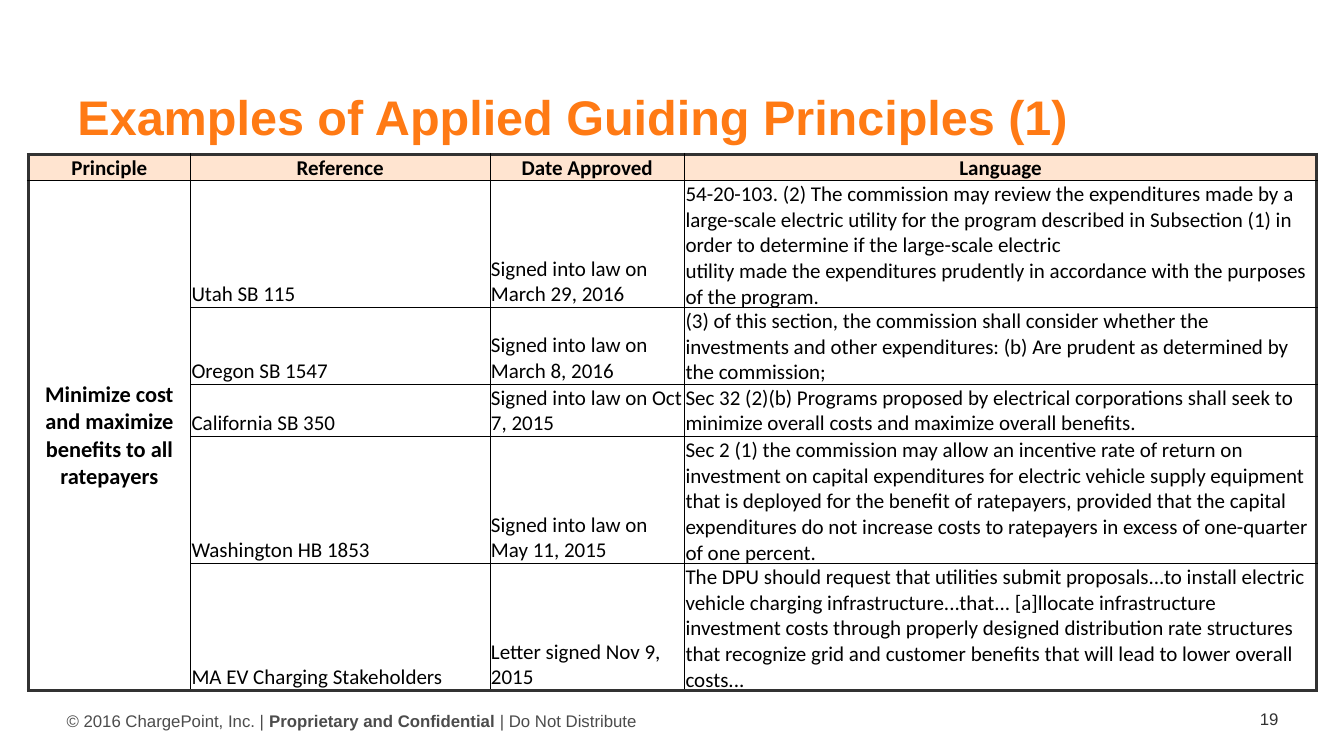
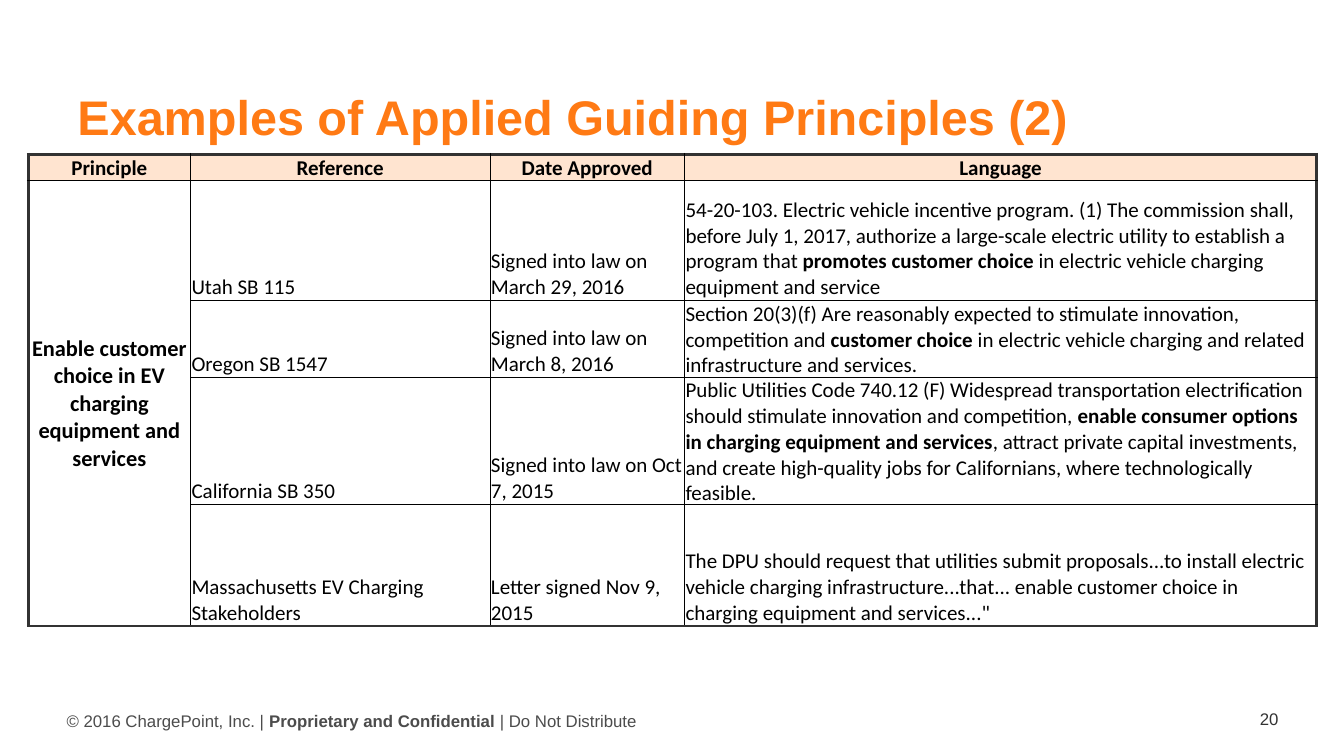
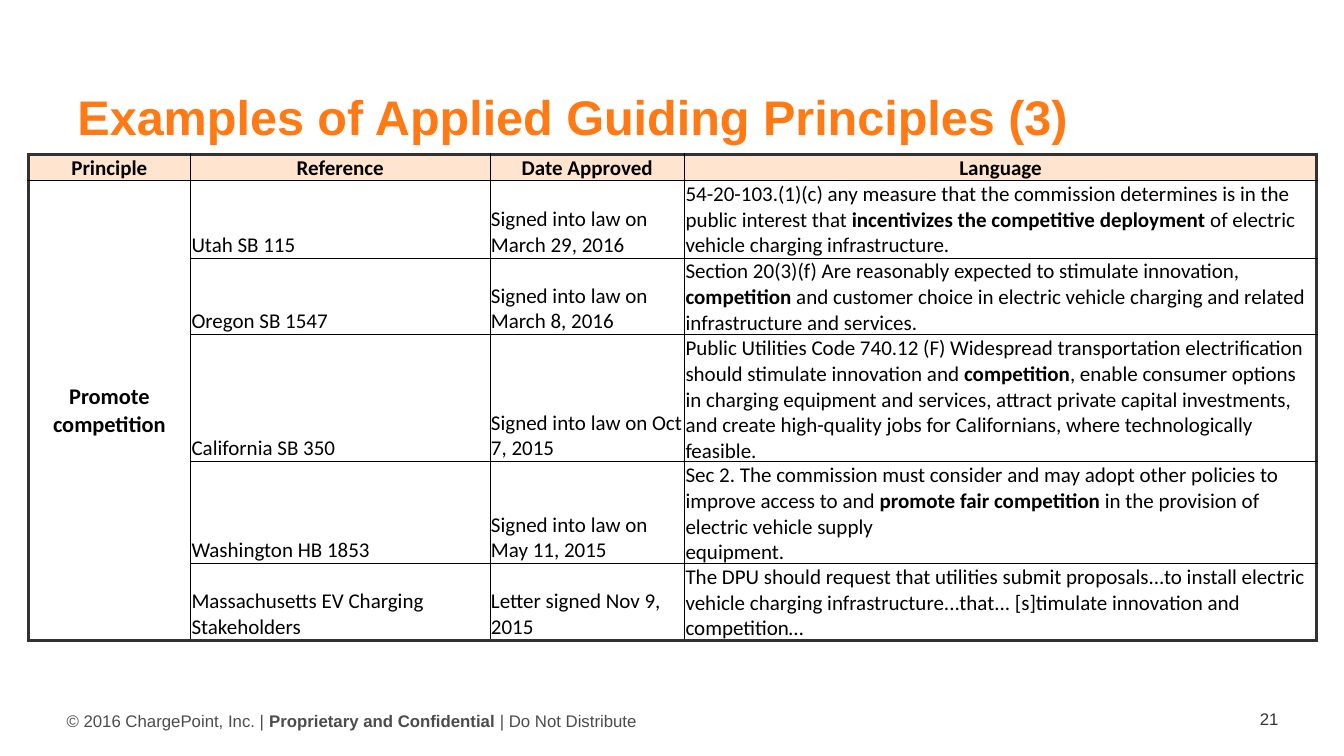
from dataclasses import dataclass

from lxml import etree
from pptx import Presentation
from pptx.dml.color import RGBColor
from pptx.enum.text import MSO_ANCHOR, PP_ALIGN
from pptx.oxml.ns import qn
from pptx.util import Inches, Pt

CENTER, LEFT, RIGHT = PP_ALIGN.CENTER, PP_ALIGN.LEFT, PP_ALIGN.RIGHT
TOP, MIDDLE, BOTTOM = MSO_ANCHOR.TOP, MSO_ANCHOR.MIDDLE, MSO_ANCHOR.BOTTOM


@dataclass
class Theme:
    title: str = "FF7A14"
    footer: str = "4C4C4C"
    dark: str = "323232"
    ink: str = "000000"
    header_fill: str = "FFE4D0"
    slide_font: str = "Arial"
    table_font: str = "Calibri"
    title_size: float = 34.7
    footer_size: float = 12
    cell_size: float = 15
    principle_size: float = 16
    frame_width: float = 2.25
    grid_width: float = 0.5


THEME = Theme()

HEADINGS = ["Principle", "Reference", "Date Approved", "Language"]
COLUMN_WIDTHS = [1.61, 2.97, 1.93, 6.27]
HEADER_HEIGHT = 0.26
FOOTER = "© 2016 ChargePoint, Inc. | **Proprietary and Confidential **| Do Not Distribute"
FIRST_PAGE = 19

UTAH = ("Utah SB 115", "Signed into law on March 29, 2016")
OREGON = ("Oregon SB 1547", "Signed into law on March 8, 2016")
CALIFORNIA = ("California SB 350", "Signed into law on Oct 7, 2015")
WASHINGTON = ("Washington HB 1853", "Signed into law on May 11, 2015")
LETTER_DATE = "Letter signed Nov 9, 2015"
MASSACHUSETTS = ("Massachusetts EV Charging Stakeholders", LETTER_DATE)
DPU = ("The DPU should request that utilities submit proposals...to install electric "
       "vehicle charging infrastructure...that... ")

# Each principle has rows of (height, (reference, date), language); ** marks bold text.
PRINCIPLES = [
    ("Minimize cost and maximize benefits to all ratepayers", [
        (1.26, UTAH,
         "54-20-103. (2) The commission may review the expenditures made by a large-scale "
         "electric utility for the program described in Subsection (1) in order to determine "
         "if the large-scale electric\nutility made the expenditures prudently in accordance "
         "with the purposes of the program."),
        (0.76, OREGON,
         "(3) of this section, the commission shall consider whether the investments and other "
         "expenditures: (b) Are prudent as determined by the commission;"),
        (0.52, CALIFORNIA,
         "Sec 32 (2)(b) Programs proposed by electrical corporations shall seek to minimize "
         "overall costs and maximize overall benefits."),
        (1.26, WASHINGTON,
         "Sec 2 (1) the commission may allow an incentive rate of return on investment on "
         "capital expenditures for electric vehicle supply equipment that is deployed for the "
         "benefit of ratepayers, provided that the capital expenditures do not increase costs "
         "to ratepayers in excess of one-quarter of one percent."),
        (1.26, ("MA EV Charging Stakeholders", LETTER_DATE),
         DPU + "[a]llocate infrastructure investment costs through properly designed "
         "distribution rate structures that recognize grid and customer benefits that will "
         "lead to lower overall costs..."),
    ]),
    ("Enable customer choice in EV charging equipment and services", [
        (1.19, UTAH,
         "54-20-103. Electric vehicle incentive program. (1) The commission shall, before "
         "July 1, 2017, authorize a large-scale electric utility to establish a program that "
         "**promotes customer choice** in electric vehicle charging equipment and service"),
        (0.76, OREGON,
         "Section 20(3)(f) Are reasonably expected to stimulate innovation, competition and "
         "**customer choice** in electric vehicle charging and related infrastructure and "
         "services."),
        (1.26, CALIFORNIA,
         "Public Utilities Code 740.12 (F) Widespread transportation electrification should "
         "stimulate innovation and competition, **enable consumer options in charging "
         "equipment and services**, attract private capital investments, and create "
         "high-quality jobs for Californians, where technologically feasible."),
        (1.21, MASSACHUSETTS,
         DPU + 'enable customer choice in charging equipment and services..."'),
    ]),
    ("Promote competition", [
        (0.77, UTAH,
         "54-20-103.(1)(c) any measure that the commission determines is in the public "
         "interest that **incentivizes the competitive deployment** of electric vehicle "
         "charging infrastructure."),
        (0.76, OREGON,
         "Section 20(3)(f) Are reasonably expected to stimulate innovation,** competition** "
         "and customer choice in electric vehicle charging and related infrastructure and "
         "services."),
        (1.26, CALIFORNIA,
         "Public Utilities Code 740.12 (F) Widespread transportation electrification should "
         "stimulate innovation and **competition**, enable consumer options in charging "
         "equipment and services, attract private capital investments, and create "
         "high-quality jobs for Californians, where technologically feasible."),
        (1.01, WASHINGTON,
         "Sec 2. The commission must consider and may adopt other policies to improve access "
         "to and **promote fair competition** in the provision of electric vehicle supply\n"
         "equipment."),
        (0.76, MASSACHUSETTS, DPU + "[s]timulate innovation and competition…"),
    ]),
]


def write(frame, text, font, size, color, align=LEFT, bold=False):
    """Fill the first paragraph; ** switches bold and a newline breaks the line."""
    paragraph = frame.paragraphs[0]
    paragraph.alignment = align
    paragraph.font.name = font
    paragraph.font.size = Pt(size)
    paragraph.font.color.rgb = RGBColor.from_string(color)
    paragraph.font.bold = bold
    for part, words in enumerate(text.split("**")):
        for number, line in enumerate(words.split("\n")):
            if number:
                paragraph.add_line_break()
            run = paragraph.add_run()
            run.text = line
            run.font.name = font
            run.font.size = Pt(size)
            run.font.color.rgb = RGBColor.from_string(color)
            run.font.bold = bold or part % 2 == 1


def draw_borders(cell, framed):
    """Draw grid lines, with the heavy frame on the sides named in framed."""
    properties = cell._tc.get_or_add_tcPr()
    for side in "LRTB":
        heavy = side in framed
        width = THEME.frame_width if heavy else THEME.grid_width
        line = etree.SubElement(properties, qn(f"a:ln{side}"), w=str(Pt(width)))
        fill = etree.SubElement(line, qn("a:solidFill"))
        etree.SubElement(fill, qn("a:srgbClr"), val=THEME.dark if heavy else THEME.ink)


prs = Presentation()
prs.slide_width, prs.slide_height = Inches(13.33), Inches(7.5)

for index, (principle, laws) in enumerate(PRINCIPLES):
    slide = prs.slides.add_slide(prs.slide_layouts[6])

    footer = slide.shapes.add_textbox(
        Inches(0.66), Inches(7), Inches(5.81), Inches(0.3)).text_frame
    footer.margin_left = 0
    footer.word_wrap = False
    write(footer, FOOTER, THEME.slide_font, THEME.footer_size, THEME.footer)

    page = slide.shapes.add_textbox(
        Inches(11.22), Inches(6.97), Inches(1.56), Inches(0.33)).text_frame
    page.word_wrap = True
    page.vertical_anchor = MIDDLE
    write(page, str(FIRST_PAGE + index), THEME.slide_font, THEME.footer_size,
          THEME.dark, RIGHT)

    heights = [HEADER_HEIGHT] + [height for height, _, _ in laws]
    rows = [HEADINGS] + [["", *source, language] for _, source, language in laws]
    rows[1][0] = principle
    table = slide.shapes.add_table(
        len(rows), len(HEADINGS), Inches(0.28), Inches(1.53),
        Inches(sum(COLUMN_WIDTHS)), Inches(sum(heights))).table
    table.first_row = table.horz_banding = False
    for column, width in zip(table.columns, COLUMN_WIDTHS):
        column.width = Inches(width)
    for row, height in zip(table.rows, heights):
        row.height = Inches(height)
    last_row, last_column = len(rows) - 1, len(HEADINGS) - 1
    table.cell(1, 0).merge(table.cell(last_row, 0))

    for r, texts in enumerate(rows):
        for c, text in enumerate(texts):
            cell = table.cell(r, c)
            is_header, is_principle = r == 0, r > 0 and c == 0
            centered = is_header or is_principle
            cell.margin_left = cell.margin_right = cell.margin_top = Inches(0.01)
            cell.margin_bottom = 0
            cell.vertical_anchor = MIDDLE if centered else BOTTOM
            framed = (("L" if c == 0 else "") + ("R" if c == last_column else "")
                      + ("T" if is_header else "")
                      + ("B" if r == last_row or is_principle and r == 1 else ""))
            draw_borders(cell, framed)
            if is_header:
                cell.fill.solid()
                cell.fill.fore_color.rgb = RGBColor.from_string(THEME.header_fill)
            else:
                cell.fill.background()
            if text:
                write(cell.text_frame, text, THEME.table_font,
                      THEME.principle_size if is_principle else THEME.cell_size,
                      THEME.ink, CENTER if centered else LEFT, centered)

    title = slide.shapes.add_textbox(
        Inches(0.67), Inches(0.81), Inches(12), Inches(0.58)).text_frame
    title.word_wrap = True
    title.vertical_anchor = TOP
    write(title, f"Examples of Applied Guiding Principles ({index + 1})",
          THEME.slide_font, THEME.title_size, THEME.title, bold=True)

prs.save("out.pptx")
